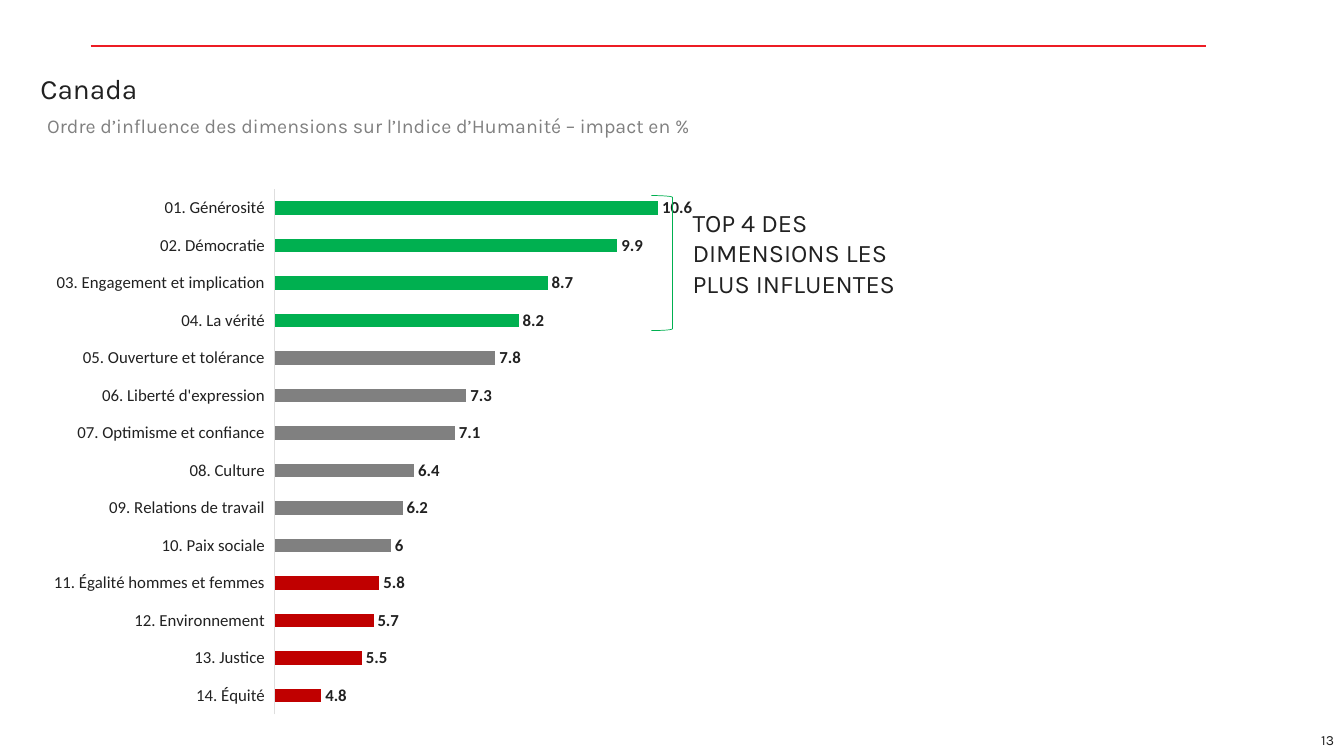
from lxml import etree
from pptx import Presentation
from pptx.chart.data import CategoryChartData
from pptx.dml.color import RGBColor
from pptx.enum.chart import XL_CHART_TYPE, XL_LABEL_POSITION, XL_TICK_LABEL_POSITION, XL_TICK_MARK
from pptx.enum.shapes import MSO_CONNECTOR, MSO_SHAPE
from pptx.enum.text import MSO_ANCHOR, MSO_AUTO_SIZE, PP_ALIGN
from pptx.oxml.ns import qn
from pptx.util import Inches, Pt

BAR_CLUSTERED = XL_CHART_TYPE.BAR_CLUSTERED
OUTSIDE_END = XL_LABEL_POSITION.OUTSIDE_END
LABELS_LOW = XL_TICK_LABEL_POSITION.LOW
NO_TICK = XL_TICK_MARK.NONE
STRAIGHT = MSO_CONNECTOR.STRAIGHT
RIGHT_BRACKET = MSO_SHAPE.RIGHT_BRACKET
TOP, MIDDLE = MSO_ANCHOR.TOP, MSO_ANCHOR.MIDDLE
NO_AUTOFIT = MSO_AUTO_SIZE.NONE
LEFT, RIGHT = PP_ALIGN.LEFT, PP_ALIGN.RIGHT

INK = RGBColor(0x21, 0x21, 0x21)
GREY = RGBColor(0x80, 0x80, 0x80)
PALE_GREY = RGBColor(0xDE, 0xDE, 0xDE)
GREEN = RGBColor(0x00, 0xB0, 0x50)
DARK_RED = RGBColor(0xC0, 0x00, 0x00)
RULE_RED = RGBColor(0xED, 0x1C, 0x24)

DIMENSIONS = [
    ("Générosité", 10.6), ("Démocratie", 9.9), ("Engagement et implication", 8.7),
    ("La vérité", 8.2), ("Ouverture et tolérance", 7.8), ("Liberté d'expression", 7.3),
    ("Optimisme et confiance", 7.1), ("Culture", 6.4), ("Relations de travail", 6.2),
    ("Paix sociale", 6), ("Égalité hommes et femmes", 5.8), ("Environnement", 5.7),
    ("Justice", 5.5), ("Équité", 4.8),
]
TOP_COUNT = BOTTOM_COUNT = 4


class InfluenceSlide:
    """Holds the fonts and the current slide, and adds each kind of element."""

    def __init__(self, presentation, text_font, chart_font):
        self.slide = presentation.slides.add_slide(presentation.slide_layouts[5])
        self.shapes = self.slide.shapes
        self.text_font = text_font
        self.chart_font = chart_font

    def style_font(self, font, name, size, color, bold=False):
        font.name, font.size, font.bold = name, Pt(size), bold
        font.color.rgb = color

    def fill_text(self, holder, text, size, color, align=LEFT, anchor=TOP, spacing=1.0):
        frame = holder.text_frame
        frame.text = text
        frame.word_wrap = True
        frame.auto_size = NO_AUTOFIT
        frame.vertical_anchor = anchor
        paragraph = frame.paragraphs[0]
        paragraph.alignment = align
        paragraph.line_spacing = spacing
        self.style_font(paragraph.font, self.text_font, size, color)

    def title(self, box, text, size, color, **layout):
        heading = self.shapes.title
        heading.left, heading.top, heading.width, heading.height = map(Inches, box)
        self.fill_text(heading, text, size, color, **layout)

    def text(self, box, text, size, color, **layout):
        self.fill_text(self.shapes.add_textbox(*map(Inches, box)), text, size, color, **layout)

    def rule(self, ends, color, width):
        rule = self.shapes.add_connector(STRAIGHT, *map(Inches, ends))
        rule.line.color.rgb = color
        rule.line.width = Pt(width)
        etree.SubElement(rule._element.spPr, qn("a:effectLst"))

    def bracket(self, box, color, width):
        bracket = self.shapes.add_shape(RIGHT_BRACKET, *map(Inches, box))
        bracket.shadow.inherit = False
        bracket.fill.background()
        bracket.line.color.rgb = color
        bracket.line.width = Pt(width)

    def bar_chart(self, box, categories, values, colors, plot_area):
        data = CategoryChartData()
        data.categories = categories
        data.add_series("Impact en %", values)
        chart = self.shapes.add_chart(BAR_CLUSTERED, *map(Inches, box), data).chart
        chart.has_legend = False
        chart.has_title = False
        self.style_font(chart.font, self.chart_font, 10, INK)

        category_axis = chart.category_axis
        category_axis.major_tick_mark = category_axis.minor_tick_mark = NO_TICK
        category_axis.tick_label_position = LABELS_LOW
        category_axis.format.line.color.rgb = PALE_GREY
        category_axis.format.line.width = Pt(0.75)
        self.style_font(category_axis.tick_labels.font, self.chart_font, 12, INK)

        value_axis = chart.value_axis
        value_axis.minimum_scale, value_axis.maximum_scale = 4, 11
        value_axis.has_major_gridlines = False
        value_axis.visible = False

        plot = chart.plots[0]
        plot.gap_width = 182
        plot.vary_by_categories = False
        series = plot.series[0]
        series.format.fill.solid()
        series.format.fill.fore_color.rgb = GREY
        for index, color in enumerate(colors):
            fill = series.points[index].format.fill
            fill.solid()
            fill.fore_color.rgb = color

        labels = series.data_labels
        labels.show_value = True
        labels.position = OUTSIDE_END
        labels.number_format = "General"
        labels.number_format_is_linked = False
        self.style_font(labels.font, self.chart_font, 12, INK, bold=True)
        self.place_plot(chart, plot_area)

    def place_plot(self, chart, plot_area):
        area = chart._chartSpace.find(".//" + qn("c:plotArea"))
        for automatic in area.findall(qn("c:layout")):
            area.remove(automatic)
        layout = etree.Element(qn("c:layout"))
        area.insert(0, layout)
        manual = etree.SubElement(layout, qn("c:manualLayout"))
        settings = [("layoutTarget", "inner"), ("xMode", "edge"), ("yMode", "edge")]
        settings += zip("xywh", plot_area)
        for tag, value in settings:
            etree.SubElement(manual, qn("c:" + tag)).set("val", str(value))


def main():
    presentation = Presentation()
    presentation.slide_width, presentation.slide_height = Inches(13.33), Inches(7.5)
    page = InfluenceSlide(presentation, "Karla", "Calibri")

    page.rule((0.9, 0.46, 11.96, 0.46), RULE_RED, 1.5)
    page.text((12.09, 7.18, 1.24, 0.32), "13", 10, INK, align=RIGHT, anchor=MIDDLE)
    page.title((0.3, 0.72, 9.56, 0.39), "Canada", 20, INK, spacing=0.8)
    page.text((0.37, 1.11, 8.49, 0.39),
              "Ordre d’influence des dimensions sur l’Indice d’Humanité – impact en %",
              14, GREY, spacing=0.9)

    middle_count = len(DIMENSIONS) - TOP_COUNT - BOTTOM_COUNT
    ranked = [f"{rank:02d}. {name}" for rank, (name, _) in enumerate(DIMENSIONS, 1)]
    impacts = [impact for _, impact in DIMENSIONS]
    colors = [DARK_RED] * BOTTOM_COUNT + [GREY] * middle_count + [GREEN] * TOP_COUNT
    page.bar_chart((-0.53, 1.48, 8, 5.77), ranked[::-1], impacts[::-1], colors,
                   plot_area=(0.407, 0.069, 0.504, 0.903))

    page.bracket((6.46, 1.94, 0.21, 1.34), GREEN, 0.5)
    page.text((6.77, 2.01, 2.21, 1.01), "TOP 4 DES DIMENSIONS LES PLUS INFLUENTES", 18, INK)
    presentation.save("out.pptx")


if __name__ == "__main__":
    main()
